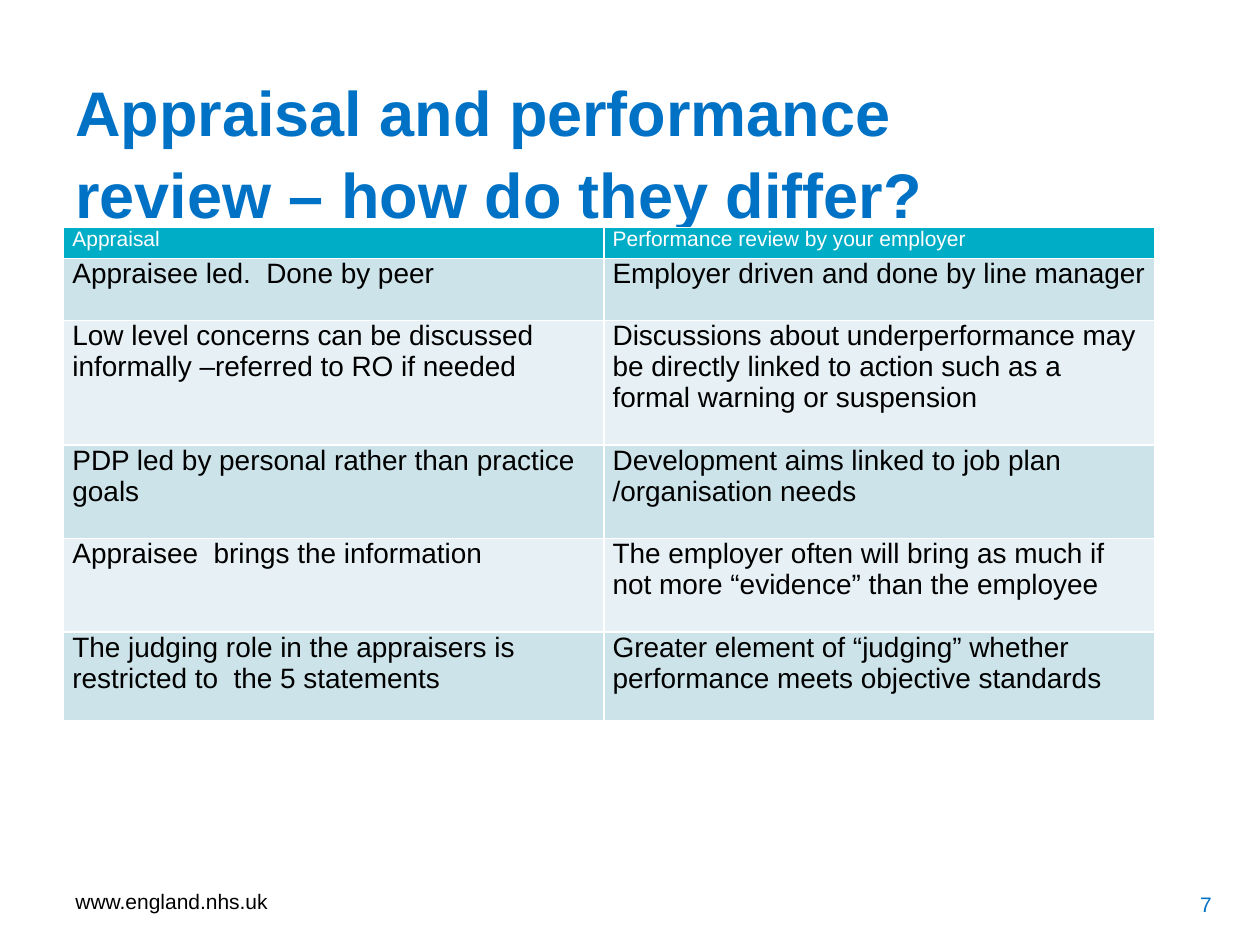
from lxml.etree import SubElement
from pptx import Presentation
from pptx.dml.color import RGBColor
from pptx.enum.text import MSO_ANCHOR as Anchor, PP_ALIGN as Align
from pptx.oxml.ns import qn
from pptx.util import Pt

COLORS = {
    "blue": "0072C6",
    "teal": "00ADC6",
    "dark_band": "CCE3EA",
    "light_band": "E7F1F5",
    "white": "FFFFFF",
    "black": "000000",
}


def write_text(frame, text, size, color, bold=False, align=Align.LEFT, spacing=1.0):
    frame.word_wrap = True
    paragraph = frame.paragraphs[0]
    paragraph.alignment = align
    paragraph.line_spacing = spacing
    run = paragraph.add_run()
    run.text = text
    for key, value in {"name": "Arial", "size": Pt(size), "bold": bold}.items():
        setattr(run.font, key, value)
    run.font.color.rgb = RGBColor.from_string(COLORS[color])


def draw_borders(cell, widths):
    properties = cell._tc.get_or_add_tcPr()
    for position, (side, width) in enumerate(widths.items()):
        line = SubElement(properties, qn(f"a:{side}"), w=str(Pt(width)))
        fill = SubElement(line, qn("a:solidFill"))
        SubElement(fill, qn("a:srgbClr"), val=COLORS["white"])
        properties.remove(line)
        properties.insert(position, line)


deck = Presentation()
deck.slide_width, deck.slide_height = Pt(720), Pt(540)
slide = deck.slides.add_slide(deck.slide_layouts[6])

labels = [
    ((36, 500.4, 168, 28.8), "www.england.nhs.uk", {"size": 12, "color": "black"}),
    ((531.5, 502, 168, 28.8), "7", {"size": 12, "color": "blue", "align": Align.RIGHT}),
    (
        (36, 59, 579.6, 52.6),
        "Appraisal and performance review – how do they differ?",
        {"size": 36, "color": "blue", "bold": True, "spacing": 1.08},
    ),
]
for place, text, style in labels:
    frame = slide.shapes.add_textbox(*map(Pt, place)).text_frame
    frame.vertical_anchor = Anchor.MIDDLE
    write_text(frame, text, **style)

comparison = [
    ("Appraisal", "Performance review by your employer"),
    ("Appraisee led.  Done by peer", "Employer driven and done by line manager"),
    (
        "Low level concerns can be discussed informally –referred to RO if needed",
        "Discussions about underperformance may be directly linked to action such as a formal warning or suspension",
    ),
    (
        "PDP led by personal rather than practice goals",
        "Development aims linked to job plan /organisation needs",
    ),
    (
        "Appraisee  brings the information",
        "The employer often will bring as much if not more “evidence” than the employee",
    ),
    (
        "The judging role in the appraisers is restricted to  the 5 statements",
        "Greater element of “judging” whether performance meets objective standards",
    ),
]
column_widths = [308.7, 314.6]
row_heights = [17.6, 35.6, 71.2, 53.4, 53.4, 51]
table = slide.shapes.add_table(
    len(comparison), 2, Pt(36.4), Pt(130), Pt(sum(column_widths)), Pt(sum(row_heights))
).table
for column, width in zip(table.columns, column_widths):
    column.width = Pt(width)

cell_format = {
    "margin_left": Pt(5),
    "margin_right": Pt(5),
    "margin_top": 0,
    "margin_bottom": 0,
    "vertical_anchor": Anchor.TOP,
}
for index, (topics, height) in enumerate(zip(comparison, row_heights)):
    table.rows[index].height = Pt(height)
    is_header = index == 0
    band = "teal" if is_header else ("light_band", "dark_band")[index % 2]
    size, color = (12, "white") if is_header else (16, "black")
    for cell, topic in zip(table.rows[index].cells, topics):
        for key, value in cell_format.items():
            setattr(cell, key, value)
        cell.fill.solid()
        cell.fill.fore_color.rgb = RGBColor.from_string(COLORS[band])
        write_text(cell.text_frame, topic, size, color)
        draw_borders(cell, {"lnL": 1, "lnR": 1, "lnT": 1, "lnB": 1})

deck.save("out.pptx")
